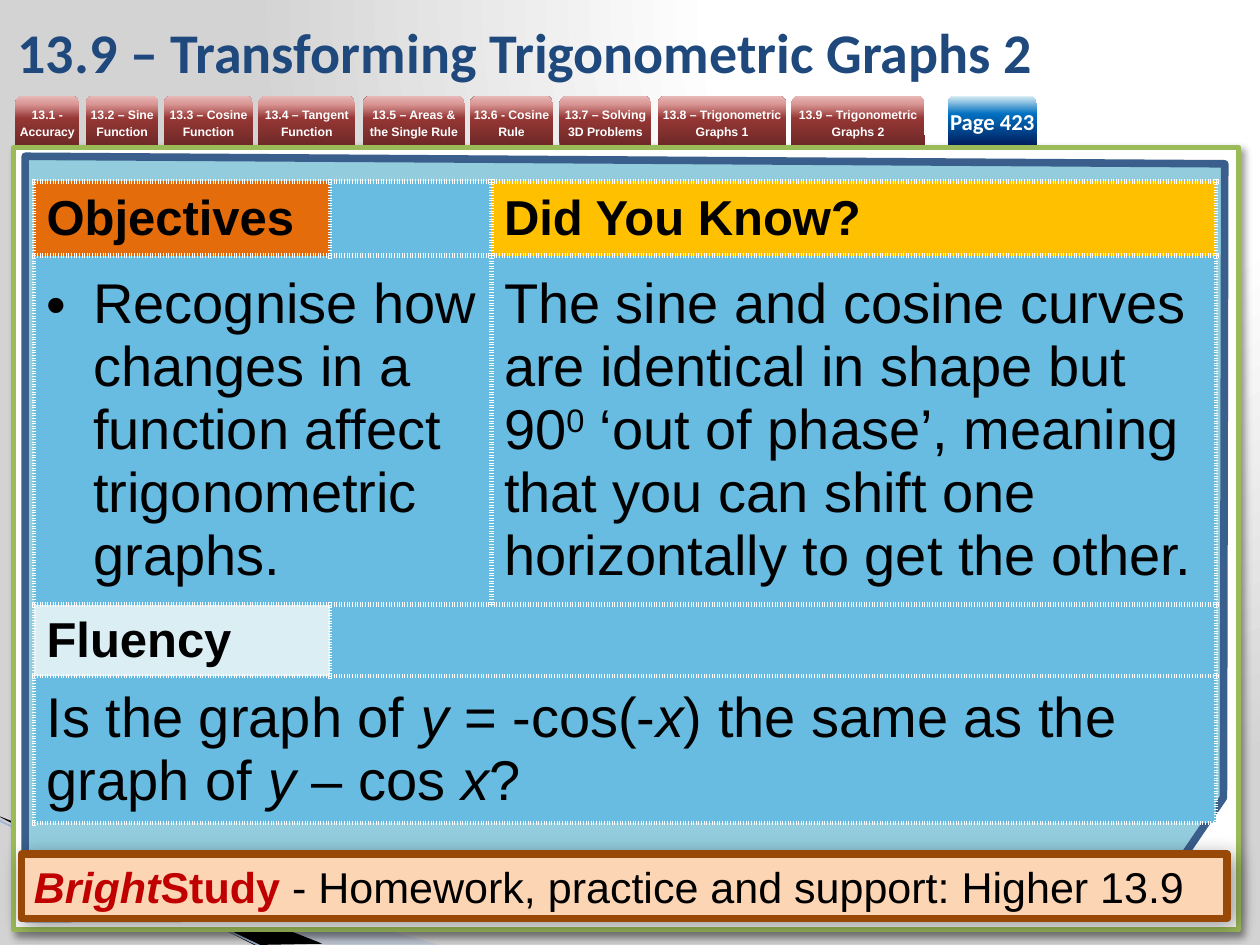
from dataclasses import dataclass, field
from typing import Any, NamedTuple

from lxml import etree
from pptx import Presentation
from pptx.dml.color import RGBColor
from pptx.enum.shapes import MSO_CONNECTOR, MSO_SHAPE
from pptx.enum.text import MSO_ANCHOR, MSO_AUTO_SIZE, PP_ALIGN
from pptx.oxml.ns import qn
from pptx.util import Inches, Pt

RECTANGLE, TAB_SHAPE = MSO_SHAPE.RECTANGLE, MSO_SHAPE.ROUND_2_SAME_RECTANGLE
STRAIGHT = MSO_CONNECTOR.STRAIGHT
MIDDLE, CENTER, LEFT = MSO_ANCHOR.MIDDLE, PP_ALIGN.CENTER, PP_ALIGN.LEFT
GROW = MSO_AUTO_SIZE.SHAPE_TO_FIT_TEXT

Stops = tuple[tuple[int, str], ...]


@dataclass(frozen=True)
class Theme:
    body_font: str = "Arial"
    heading_font: str = "Calibri"
    black: str = "000000"
    white: str = "FFFFFF"
    title: str = "1F497D"
    brand: str = "C00000"
    frame_line: str = "9BBB59"
    panel: str = "93CDDD"
    panel_line: str = "3A5F8C"
    swoosh: str = "A7B9DB"
    swoosh_line: str = "9EB3D6"
    cell: str = "68BCE1"
    objectives: str = "E46C0A"
    did_you_know: str = "FFC000"
    fluency: str = "DBEEF4"
    banner: str = "FCD5B5"
    banner_line: str = "984807"
    backdrop: Stops = ((0, "FFFFFF"), (40, "FFFFFF"), (100, "D3D3D3"))
    lesson_tab: Stops = ((0, "6F2927"), (54, "953735"), (83, "D99694"), (100, "E6B9B8"))
    page_tab: Stops = ((0, "002060"), (63, "0070C0"), (100, "DBEEF4"))
    title_size: float = 32
    tab_size: float = 7
    page_size: float = 13
    heading_size: float = 28
    text_size: float = 32
    banner_size: float = 24.6
    border: float = 3
    heavy_line: float = 4.33


THEME = Theme()


class Tab(NamedTuple):
    left: float
    width: float
    label: str


class Run(NamedTuple):
    text: str
    format: dict[str, Any] = {}
    color: str = THEME.black
    superscript: bool = False


@dataclass(frozen=True)
class Cell:
    row: int
    column: int
    fill: str
    runs: list[Run] = field(default_factory=list)
    span: int = 1
    bullet: bool = False


HEADING = {"name": THEME.body_font, "size": Pt(THEME.heading_size), "bold": True}
BODY = {"name": THEME.body_font, "size": Pt(THEME.text_size), "bold": False}
VARIABLE = BODY | {"italic": True}
TAB_TEXT = {"name": THEME.body_font, "size": Pt(THEME.tab_size), "bold": True}
PAGE_TEXT = {"name": THEME.heading_font, "size": Pt(THEME.page_size), "bold": True}
TITLE = {"name": THEME.heading_font, "size": Pt(THEME.title_size), "bold": True}
BANNER = {"name": THEME.body_font, "size": Pt(THEME.banner_size), "bold": False}
BRAND = BANNER | {"bold": True}

LESSON_TABS = [
    Tab(0.12, 0.51, "13.1 - Accuracy"),
    Tab(0.68, 0.58, "13.2 – Sine Function"),
    Tab(1.3, 0.71, "13.3 – Cosine Function"),
    Tab(2.05, 0.77, "13.4 – Tangent Function"),
    Tab(2.88, 0.81, "13.5 – Areas & the Single Rule"),
    Tab(3.73, 0.66, "13.6 - Cosine Rule"),
    Tab(4.44, 0.73, "13.7 – Solving 3D Problems"),
    Tab(5.22, 1.02, "13.8 – Trigonometric Graphs 1"),
    Tab(6.28, 1.06, "13.9 – Trigonometric Graphs 2"),
]
PAGE_TAB = Tab(7.52, 0.71, "Page 423")

COLUMN_WIDTHS = [2.35, 1.28, 5.75]
ROW_HEIGHTS = [0.59, 2.04, 0.49, 0.51]
BULLET_INDENT = Inches(0.37)
CELLS = [
    Cell(0, 0, THEME.objectives, [Run("Objectives", HEADING)]),
    Cell(0, 1, THEME.cell),
    Cell(0, 2, THEME.did_you_know, [Run("Did You Know?", HEADING)]),
    Cell(1, 0, THEME.cell, [
        Run("Recognise how changes in a function affect trigonometric graphs.", BODY),
    ], span=2, bullet=True),
    Cell(1, 2, THEME.cell, [
        Run("The sine and cosine curves are identical in shape but 90", BODY),
        Run("0", BODY, superscript=True),
        Run(" ‘out of phase’, meaning that you can shift one horizontally to get the other.", BODY),
    ]),
    Cell(2, 0, THEME.fluency, [Run("Fluency", HEADING)]),
    Cell(2, 1, THEME.cell, span=2),
    Cell(3, 0, THEME.cell, [
        Run("Is the graph of ", BODY), Run("y ", VARIABLE), Run("= -cos(-", BODY),
        Run("x", VARIABLE), Run(") the same as the graph of ", BODY), Run("y", VARIABLE),
        Run(" – cos ", BODY), Run("x", VARIABLE), Run("?", BODY),
    ], span=3),
]


def rgb(color: str) -> RGBColor:
    return RGBColor.from_string(color)


def add_node(parent: Any, tag: str, **attributes: Any) -> Any:
    return etree.SubElement(parent, qn(tag), {key: str(value) for key, value in attributes.items()})


def apply_gradient(fill: Any, owner: Any, stops: Stops, radial: bool = False) -> None:
    """Fill with many stops, upwards or as a circle around the top right corner."""
    fill.gradient()
    gradient = owner.find(".//" + qn("a:gradFill"))
    for child in list(gradient):
        gradient.remove(child)
    stop_list = add_node(gradient, "a:gsLst")
    for position, color in stops:
        add_node(add_node(stop_list, "a:gs", pos=position * 1000), "a:srgbClr", val=color)
    if radial:
        circle = add_node(gradient, "a:path", path="circle")
        add_node(circle, "a:fillToRect", l=65000, t=0, r=0, b=98000)
    else:
        add_node(gradient, "a:lin", ang=16200000, scaled=0)


def style_shape(shape: Any, fill: str, line: str | None = None, width: float = 0) -> None:
    shape.shadow.inherit = False
    shape.fill.solid()
    shape.fill.fore_color.rgb = rgb(fill)
    if line:
        shape.line.color.rgb = rgb(line)
        shape.line.width = Pt(width)
    else:
        shape.line.fill.background()


def cast_shadow(shape: Any, blur: float) -> None:
    effects = shape.element.spPr.find(qn("a:effectLst"))
    shadow = add_node(effects, "a:outerShdw", blurRad=Pt(blur), dist=Pt(3), dir=2700000)
    color = add_node(shadow, "a:srgbClr", val=THEME.black)
    add_node(color, "a:alpha", val=40000)


def write(paragraph: Any, runs: list[Run]) -> None:
    for part in runs:
        run = paragraph.add_run()
        run.text = part.text
        for name, value in part.format.items():
            setattr(run.font, name, value)
        run.font.color.rgb = rgb(part.color)
        if part.superscript:
            run._r.get_or_add_rPr().set("baseline", "30000")


def add_rectangle(slide: Any, left: float, top: float, width: float, height: float,
                  kind: Any = RECTANGLE) -> Any:
    return slide.shapes.add_shape(kind, Inches(left), Inches(top), Inches(width), Inches(height))


def add_outline(slide: Any, points: list[tuple[float, float]]) -> Any:
    corners = [(Inches(x), Inches(y)) for x, y in points]
    builder = slide.shapes.build_freeform(*corners[0])
    builder.add_line_segments(corners[1:], close=True)
    return builder.convert_to_shape()


def add_tab(slide: Any, tab: Tab, stops: Stops, text: dict[str, Any], spacing: Any = None) -> None:
    shape = add_rectangle(slide, tab.left, 0.76, tab.width, 0.39, TAB_SHAPE)
    style_shape(shape, THEME.white)
    apply_gradient(shape.fill, shape.element, stops)
    frame = shape.text_frame
    for side in ("left", "top", "right", "bottom"):
        setattr(frame, f"margin_{side}", 0)
    frame.vertical_anchor = MIDDLE
    paragraph = frame.paragraphs[0]
    paragraph.alignment, paragraph.line_spacing = CENTER, spacing
    write(paragraph, [Run(tab.label, text, THEME.white)])


def draw_backdrop(slide: Any) -> None:
    apply_gradient(slide.background.fill, slide.element, THEME.backdrop, radial=True)
    swoosh = add_outline(slide, [(-0.01, 6.5), (3.49, 7.5), (2.59, 7.5), (-0.01, 6.49)])
    style_shape(swoosh, THEME.swoosh)
    add_node(swoosh.element.spPr.find(".//" + qn("a:srgbClr")), "a:alpha", val=40000)
    style_shape(add_outline(slide, [(0, 6.48), (2.56, 7.49), (2.02, 7.5), (0.01, 6.49)]), THEME.black)
    edge = slide.shapes.add_connector(STRAIGHT, Inches(-0.01), Inches(6.51), Inches(2.09), Inches(7.52))
    edge.line.color.rgb, edge.line.width = rgb(THEME.swoosh_line), Pt(0.95)
    add_node(edge.element.spPr, "a:effectLst")
    frame = add_rectangle(slide, 0.11, 1.17, 9.72, 6.21)
    style_shape(frame, THEME.white, THEME.frame_line, THEME.border)
    cast_shadow(frame, 4)
    panel = add_outline(slide, [(0.2, 1.24), (9.72, 1.3), (9.71, 6.33), (9.07, 7.27), (0.2, 7.29)])
    style_shape(panel, THEME.panel, THEME.panel_line, THEME.heavy_line)


def add_borders(cell: Any) -> None:
    properties = cell._tc.get_or_add_tcPr()
    for index, side in enumerate("LRTB"):
        border = add_node(properties, f"a:ln{side}", w=Pt(THEME.border))
        properties.insert(index, border)
        add_node(add_node(border, "a:solidFill"), "a:srgbClr", val=THEME.white)
        add_node(border, "a:prstDash", val="sysDot")


def draw_table(slide: Any) -> None:
    holder = slide.shapes.add_table(len(ROW_HEIGHTS), len(COLUMN_WIDTHS), Inches(0.27), Inches(1.44),
                                    Inches(sum(COLUMN_WIDTHS)), Inches(sum(ROW_HEIGHTS)))
    table = holder.table
    table.first_row = table.horz_banding = False
    for column, width in zip(table.columns, COLUMN_WIDTHS):
        column.width = Inches(width)
    for row, height in zip(table.rows, ROW_HEIGHTS):
        row.height = Inches(height)
    for item in CELLS:
        cell = table.cell(item.row, item.column)
        if item.span > 1:
            cell.merge(table.cell(item.row, item.column + item.span - 1))
        cell.vertical_anchor = MIDDLE
        paragraph = cell.text_frame.paragraphs[0]
        if item.bullet:
            properties = paragraph._p.get_or_add_pPr()
            properties.set("marL", str(BULLET_INDENT))
            properties.set("indent", str(-BULLET_INDENT))
            add_node(properties, "a:buFont", typeface=THEME.body_font)
            add_node(properties, "a:buChar", char="•")
        write(paragraph, item.runs)
        for offset in range(item.span):
            part = table.cell(item.row, item.column + offset)
            part.fill.solid()
            part.fill.fore_color.rgb = rgb(item.fill)
            add_borders(part)


def draw_title(slide: Any) -> None:
    box = slide.shapes.add_textbox(Inches(0.04), Inches(0.05), Inches(8.27), Inches(0.71))
    box.text_frame.word_wrap, box.text_frame.vertical_anchor = True, MIDDLE
    write(box.text_frame.paragraphs[0],
          [Run("13.9 – Transforming Trigonometric Graphs 2", TITLE, THEME.title)])


def draw_banner(slide: Any) -> None:
    banner = add_rectangle(slide, 0.17, 6.78, 9.57, 0.51)
    style_shape(banner, THEME.banner, THEME.banner_line, THEME.heavy_line)
    cast_shadow(banner, 13)
    frame = banner.text_frame
    frame.vertical_anchor, frame.auto_size = MIDDLE, GROW
    paragraph = frame.paragraphs[0]
    paragraph.alignment = LEFT
    write(paragraph, [
        Run("Bright", BRAND | {"italic": True}, THEME.brand),
        Run("Study ", BRAND, THEME.brand),
        Run("- Homework, practice and support: Higher 13.9", BANNER),
    ])


def main() -> None:
    presentation = Presentation()
    presentation.slide_width, presentation.slide_height = Inches(10), Inches(7.5)
    slide = presentation.slides.add_slide(presentation.slide_layouts[6])
    draw_backdrop(slide)
    for tab in LESSON_TABS:
        add_tab(slide, tab, THEME.lesson_tab, TAB_TEXT, Pt(10))
    draw_title(slide)
    add_tab(slide, PAGE_TAB, THEME.page_tab, PAGE_TEXT)
    draw_table(slide)
    draw_banner(slide)
    presentation.save("out.pptx")


if __name__ == "__main__":
    main()
